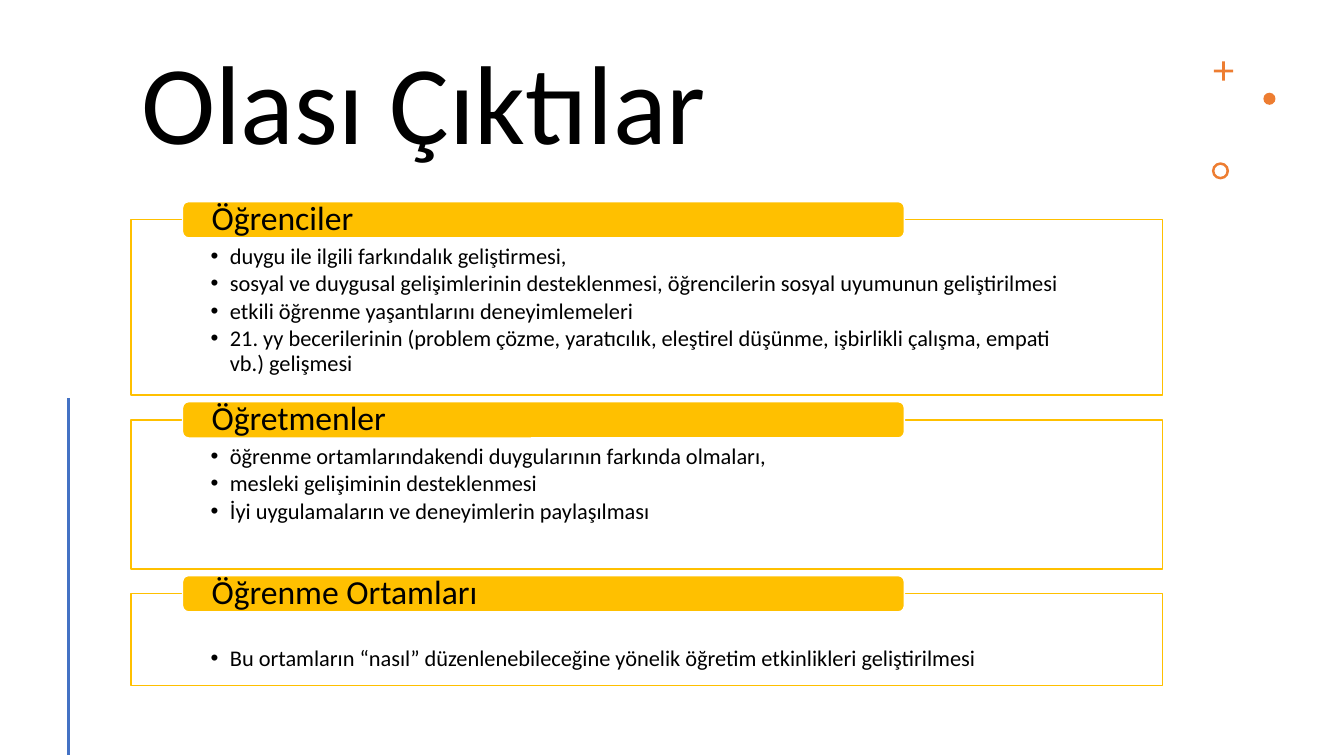
from dataclasses import dataclass

from lxml import etree
from pptx import Presentation
from pptx.dml.color import RGBColor
from pptx.enum.shapes import MSO_CONNECTOR, MSO_SHAPE
from pptx.enum.text import MSO_ANCHOR, MSO_AUTO_SIZE, PP_ALIGN
from pptx.oxml.ns import qn
from pptx.util import Inches, Pt

BLACK = RGBColor(0x00, 0x00, 0x00)
WHITE = RGBColor(0xFF, 0xFF, 0xFF)
GOLD = RGBColor(0xFF, 0xC0, 0x00)
ORANGE = RGBColor(0xED, 0x7D, 0x31)
BLUE = RGBColor(0x44, 0x72, 0xC4)

LEFT = PP_ALIGN.LEFT
TOP = MSO_ANCHOR.TOP
MIDDLE = MSO_ANCHOR.MIDDLE
NO_AUTOFIT = MSO_AUTO_SIZE.NONE
STRAIGHT = MSO_CONNECTOR.STRAIGHT
ROUNDED = MSO_SHAPE.ROUNDED_RECTANGLE
CROSS = MSO_SHAPE.CROSS
OVAL = MSO_SHAPE.OVAL
DONUT = MSO_SHAPE.DONUT

SLIDE_WIDTH = Inches(13.33)
SLIDE_HEIGHT = Inches(7.5)
COMPARISON_LAYOUT = 4

PANEL_LEFT = 9.75
PANEL_WIDTH = 76.74
FIRST_PANEL_TOP = 29.07
PANEL_GAP = 3.27
CAP_LEFT = 13.58
CAP_WIDTH = 53.71
CAP_HEIGHT = 4.8
PANEL_SIDE_INSET = 5.93
PANEL_BOTTOM_INSET = 1.6
CAP_SIDE_INSET = 2.03
BULLET_INDENT = Inches(0.19)


@dataclass
class Section:
    heading: str
    items: list[str]
    height: float
    top_inset: float = 3.33


@dataclass
class Ornament:
    preset: int
    left: float
    top: float
    width: float
    height: float
    adjustment: float | None = None


SECTIONS = [
    Section("Öğrenciler", [
        "duygu ile ilgili farkındalık geliştirmesi,",
        "sosyal ve duygusal gelişimlerinin desteklenmesi, öğrencilerin sosyal uyumunun geliştirilmesi",
        "etkili öğrenme yaşantılarını deneyimlemeleri",
        "21. yy becerilerinin (problem çözme, yaratıcılık, eleştirel düşünme, işbirlikli çalışma, empati vb.) gelişmesi",
    ], 23.2),
    Section("Öğretmenler", [
        "öğrenme ortamlarındakendi duygularının farkında olmaları,",
        "mesleki gelişiminin desteklenmesi",
        "İyi uygulamaların ve deneyimlerin paylaşılması",
    ], 19.73),
    Section("Öğrenme Ortamları", [
        "Bu ortamların “nasıl” düzenlenebileceğine yönelik öğretim etkinlikleri geliştirilmesi",
    ], 12.13, 7.07),
]

ORNAMENTS = [
    Ornament(CROSS, 90.32, 8.13, 1.43, 2.53, 0.43),
    Ornament(OVAL, 94, 12.27, 0.9, 1.6),
    Ornament(DONUT, 90.17, 21.47, 1.28, 2.27, 0.15),
]


def across(percent: float) -> int:
    return round(SLIDE_WIDTH * percent / 100)


def down(percent: float) -> int:
    return round(SLIDE_HEIGHT * percent / 100)


def assign(target, values: dict) -> None:
    for name, value in values.items():
        setattr(target, name, value)


def area(left: float, top: float, width: float, height: float) -> dict:
    return {"left": across(left), "top": down(top),
            "width": across(width), "height": down(height)}


def paint(shape, fill: RGBColor, outline: RGBColor | None = None) -> None:
    shape.fill.solid()
    shape.fill.fore_color.rgb = fill
    if outline is None:
        shape.line.fill.background()
    else:
        shape.line.color.rgb = outline
        shape.line.width = Pt(1)


def format_frame(frame, anchor, side: float, top: float, bottom: float) -> None:
    assign(frame, {
        "word_wrap": True, "auto_size": NO_AUTOFIT, "vertical_anchor": anchor,
        "margin_left": across(side), "margin_right": across(side),
        "margin_top": down(top), "margin_bottom": down(bottom),
    })


def write(para, text: str, size: float, space_before: float = 0) -> None:
    para.text = text
    assign(para, {"alignment": LEFT, "line_spacing": 0.9,
                  "space_before": Pt(space_before), "space_after": Pt(0)})
    assign(para.font, {"name": "Calibri", "size": Pt(size), "bold": False})
    para.font.color.rgb = BLACK


def add_bullet(para) -> None:
    properties = para._p.get_or_add_pPr()
    properties.set("marL", str(BULLET_INDENT))
    properties.set("indent", str(-BULLET_INDENT))
    colour = etree.SubElement(properties, qn("a:buClr"))
    etree.SubElement(colour, qn("a:srgbClr"), val=str(BLACK))
    etree.SubElement(properties, qn("a:buFont"), typeface="Arial")
    etree.SubElement(properties, qn("a:buChar"), char="•")


def fill_title(title) -> None:
    assign(title, area(PANEL_LEFT, 5.6, PANEL_WIDTH, 17.47))
    format_frame(title.text_frame, MIDDLE, 0.75, 0.67, 0.67)
    write(title.text_frame.paragraphs[0], "Olası Çıktılar", 80)


def fill_panel(panel, section: Section, top: float) -> None:
    assign(panel, area(PANEL_LEFT, top, PANEL_WIDTH, section.height))
    paint(panel, WHITE, GOLD)
    frame = panel.text_frame
    format_frame(frame, TOP, PANEL_SIDE_INSET, section.top_inset, PANEL_BOTTOM_INSET)
    for index, item in enumerate(section.items):
        para = frame.add_paragraph() if index else frame.paragraphs[0]
        add_bullet(para)
        write(para, item, 16, 2.4 if index else 0)


def add_cap(page, heading: str, panel_top: float) -> None:
    place = area(CAP_LEFT, panel_top - CAP_HEIGHT / 2, CAP_WIDTH, CAP_HEIGHT)
    cap = page.shapes.add_shape(ROUNDED, **place)
    cap.shadow.inherit = False
    cap.adjustments[0] = 0.17
    paint(cap, GOLD, WHITE)
    format_frame(cap.text_frame, MIDDLE, CAP_SIDE_INSET, 0, 0)
    write(cap.text_frame.paragraphs[0], heading, 24)


def add_ornament(page, ornament: Ornament) -> None:
    place = area(ornament.left, ornament.top, ornament.width, ornament.height)
    shape = page.shapes.add_shape(ornament.preset, **place)
    shape.shadow.inherit = False
    if ornament.adjustment is not None:
        shape.adjustments[0] = ornament.adjustment
    paint(shape, ORANGE)


def add_side_line(page) -> None:
    line = page.shapes.add_connector(
        STRAIGHT, across(5.1), down(52.67), across(5.1), down(99.87))
    line.line.color.rgb = BLUE
    line.line.width = Pt(2)
    etree.SubElement(line._element.spPr, qn("a:effectLst"))


def main() -> None:
    deck = Presentation()
    assign(deck, {"slide_width": SLIDE_WIDTH, "slide_height": SLIDE_HEIGHT})
    page = deck.slides.add_slide(deck.slide_layouts[COMPARISON_LAYOUT])
    title, *panels = page.placeholders
    fill_title(title)
    for ornament in ORNAMENTS:
        add_ornament(page, ornament)
    add_side_line(page)
    top = FIRST_PANEL_TOP
    for panel, section in zip(panels, SECTIONS):
        fill_panel(panel, section, top)
        add_cap(page, section.heading, top)
        top += section.height + PANEL_GAP
    for spare in panels[len(SECTIONS):]:
        spare._element.getparent().remove(spare._element)
    deck.save("out.pptx")


if __name__ == "__main__":
    main()
